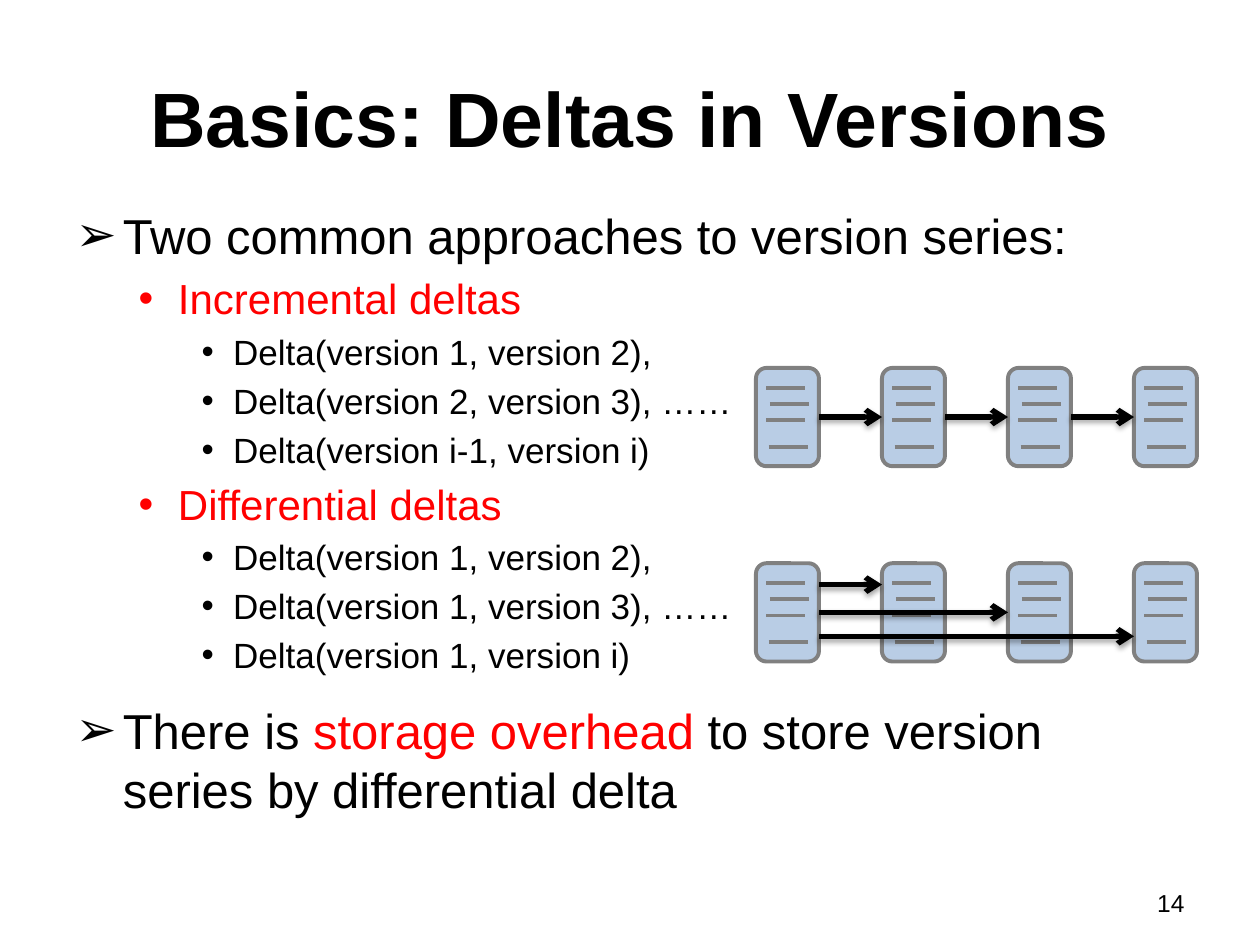
from dataclasses import dataclass

from lxml.etree import SubElement
from pptx import Presentation
from pptx.dml.color import RGBColor as RGB
from pptx.enum.shapes import MSO_CONNECTOR as CONN, MSO_SHAPE as SHAPE
from pptx.enum.text import MSO_ANCHOR as ANCHOR, MSO_AUTO_SIZE as FIT, PP_ALIGN as ALIGN
from pptx.oxml.ns import qn
from pptx.util import Inches, Pt


@dataclass(frozen=True)
class Theme:
    font: str = "Arial"
    ink: RGB = RGB(0x00, 0x00, 0x00)
    accent: RGB = RGB(0xFF, 0x00, 0x00)
    page: RGB = RGB(0xB9, 0xCD, 0xE5)
    edge: RGB = RGB(0x80, 0x80, 0x80)
    title_size: int = 44
    level_sizes: tuple = (28, 24, 20)
    number_size: int = 14
    edge_width: float = 2.25
    arrow_width: float = 3


COLS, ROWS = 20, 15
BULLETS = ("➢", "•", "•")
SPACE_BEFORE = (50, 20, 20)  # percent of the line, by level

# Each item: level, then (text, highlighted) runs
ITEMS = [
    (0, [("Two common approaches to version series:", False)]),
    (1, [("Incremental deltas", True)]),
    (2, [("Delta(version 1, version 2),", False)]),
    (2, [("Delta(version 2, version 3), ……", False)]),
    (2, [("Delta(version i-1, version i)", False)]),
    (1, [("Differential deltas", True)]),
    (2, [("Delta(version 1, version 2),", False)]),
    (2, [("Delta(version 1, version 3), ……", False)]),
    (2, [("Delta(version 1, version i)", False)]),
    (0, [("There is ", False), ("storage overhead ", True),
         ("to store version series by differential delta", False)]),
]

FIRST_COL, COL_STEP, VERSIONS = 12, 2, 4
PAGE_W, PAGE_H = 1, 1.56
# Text strokes on a page: left offset, top offset
STROKES = [(0.16, 0.32), (0.22, 0.57), (0.16, 0.83), (0.2, 1.25)]
STROKE_W = 0.62

# Each series: top row, then arrows as (from version, to version, row offset)
SERIES = [
    (5.84, [(i, i + 1, 0.78) for i in range(VERSIONS - 1)]),
    (8.94, [(0, 1, 0.34), (0, 2, 0.78), (0, 3, 1.16)]),
]


class SlideBuilder:
    def __init__(self, prs, theme):
        self.theme = theme
        self.cell_w = prs.slide_width / COLS
        self.cell_h = prs.slide_height / ROWS
        self.slide = prs.slides.add_slide(prs.slide_layouts[1])

    def x(self, cols):
        return round(cols * self.cell_w)

    def y(self, rows):
        return round(rows * self.cell_h)

    def box(self, left, top, width, height):
        return self.x(left), self.y(top), self.x(width), self.y(height)

    def place(self, sp, *cells):
        sp.left, sp.top, sp.width, sp.height = self.box(*cells)
        sp.text_frame.auto_size = FIT.NONE
        sp.text_frame.word_wrap = True
        return sp.text_frame

    def run(self, p, text, size, color=None, bold=False):
        r = p.add_run()
        r.text = text
        r.font.name, r.font.size, r.font.bold = self.theme.font, Pt(size), bold
        r.font.color.rgb = color or self.theme.ink

    def title(self, text, *cells):
        tf = self.place(self.slide.shapes.title, *cells)
        tf.vertical_anchor = ANCHOR.MIDDLE
        p = tf.paragraphs[0]
        p.alignment = ALIGN.CENTER
        self.run(p, text, self.theme.title_size, bold=True)

    def bullets(self, items, *cells):
        tf = self.place(self.slide.placeholders[1], *cells)
        for i, (level, runs) in enumerate(items):
            p = tf.add_paragraph() if i else tf.paragraphs[0]
            p.level = level
            pPr = p._p.get_or_add_pPr()
            space = SubElement(pPr, qn("a:spcBef"))
            SubElement(space, qn("a:spcPct"), val=str(SPACE_BEFORE[level] * 1000))
            SubElement(pPr, qn("a:buFont"), typeface=self.theme.font)
            SubElement(pPr, qn("a:buChar"), char=BULLETS[level])
            for text, highlighted in runs:
                color = self.theme.accent if highlighted else self.theme.ink
                self.run(p, text, self.theme.level_sizes[level], color)

    def page_number(self, text, *cells):
        tf = self.place(self.slide.shapes.add_textbox(0, 0, 0, 0), *cells)
        p = tf.paragraphs[0]
        p.alignment = ALIGN.RIGHT
        self.run(p, text, self.theme.number_size)

    def line(self, shapes, left, right, row, color, width):
        """Draw a level line and return it with its empty effect list."""
        ln = shapes.add_connector(CONN.STRAIGHT, self.x(left), self.y(row),
                                  self.x(right), self.y(row))
        ln.line.color.rgb, ln.line.width = color, Pt(width)
        return ln, SubElement(ln._element.spPr, qn("a:effectLst"))

    def arrow(self, shapes, left, right, row):
        ln, effects = self.line(shapes, left, right, row,
                                self.theme.ink, self.theme.arrow_width)
        SubElement(ln.line._get_or_add_ln(), qn("a:tailEnd"), type="arrow")
        shadow = SubElement(effects, qn("a:outerShdw"), blurRad=str(Pt(3.1)),
                            dist=str(Pt(1.8)), dir="5400000", rotWithShape="0")
        color = SubElement(shadow, qn("a:srgbClr"), val=str(self.theme.ink))
        SubElement(color, qn("a:alpha"), val="35000")

    def page(self, shapes, left, top):
        sp = shapes.add_shape(SHAPE.ROUNDED_RECTANGLE,
                              *self.box(left, top, PAGE_W, PAGE_H))
        sp.shadow.inherit = False
        sp.fill.solid()
        sp.fill.fore_color.rgb = self.theme.page
        sp.line.color.rgb, sp.line.width = self.theme.edge, Pt(self.theme.edge_width)
        for dx, dy in STROKES:
            self.line(shapes, left + dx, left + dx + STROKE_W, top + dy,
                      self.theme.edge, self.theme.edge_width)

    def version_series(self, top, arrows):
        shapes = self.slide.shapes.add_group_shape().shapes
        lefts = [FIRST_COL + i * COL_STEP for i in range(VERSIONS)]
        for left in lefts:
            self.page(shapes, left, top)
        for start, end, dy in arrows:
            self.arrow(shapes, lefts[start] + PAGE_W, lefts[end], top + dy)


def main():
    prs = Presentation()
    prs.slide_width, prs.slide_height = Inches(10), Inches(7.5)
    builder = SlideBuilder(prs, Theme())
    builder.title("Basics: Deltas in Versions", 1, 0.6, 18, 2.5)
    builder.bullets(ITEMS, 1, 3.16, 18, 11)
    builder.page_number("14", 14.34, 14, 4.66, 0.7)
    for top, arrows in SERIES:
        builder.version_series(top, arrows)
    prs.save("out.pptx")


if __name__ == "__main__":
    main()
